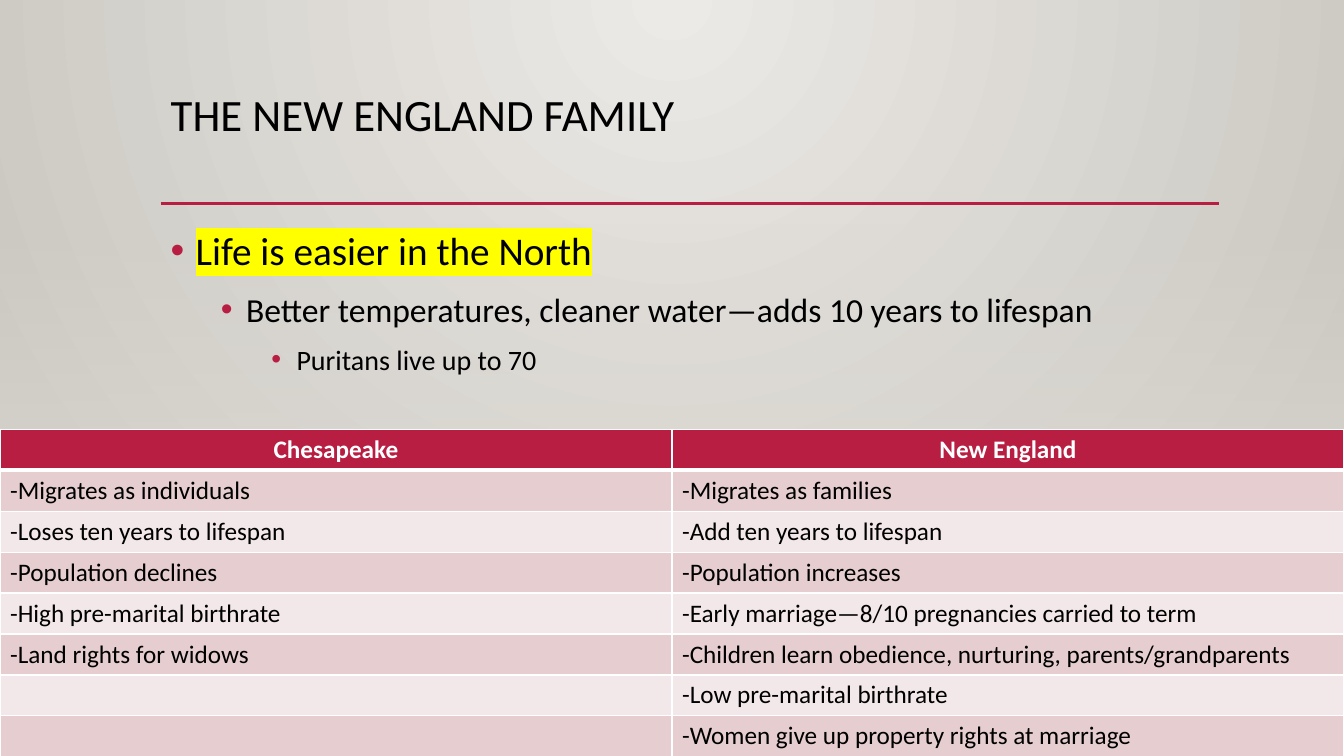
"""Build the slide on the New England family, with its comparison table."""
from lxml.etree import SubElement
from pptx import Presentation
from pptx.dml.color import RGBColor
from pptx.enum.shapes import MSO_CONNECTOR, MSO_SHAPE
from pptx.enum.text import MSO_ANCHOR, MSO_AUTO_SIZE, PP_ALIGN
from pptx.oxml import parse_xml
from pptx.oxml.ns import qn
from pptx.util import Pt

PX = 9525
WIDTH, HEIGHT = 1280, 720
LEFT, CONTENT_WIDTH = 153, 1008
TABLE_TOP, ROW_HEIGHT = 409, 39
INDENT, INDENT_STEP = 24, 48
FONT = "Calibri"
COLORS = {
    "text": "000000",
    "accent": "B71E42",
    "white": "FFFFFF",
    "highlight": "FFFF00",
    "odd_row": "E6CDCF",
    "even_row": "F3E8E9",
    "glow": "ECEAE7",
    "edge": "CAC7C1",
    "veil": "DFDBD5",
}
NAMESPACE = 'xmlns:a="http://schemas.openxmlformats.org/drawingml/2006/main"'
BULLETS = [
    ("Life is easier in the North", 28, 0),
    ("Better temperatures, cleaner water—adds 10 years to lifespan", 24, 5),
    ("Puritans live up to 70", 20, 5),
]
ROWS = [
    ("Chesapeake", "New England"),
    ("-Migrates as individuals", "-Migrates as families"),
    ("-Loses ten years to lifespan", "-Add ten years to lifespan"),
    ("-Population declines", "-Population increases"),
    ("-High pre-marital birthrate", "-Early marriage—8/10 pregnancies carried to term"),
    ("-Land rights for widows", "-Children learn obedience, nurturing, parents/grandparents"),
    ("", "-Low pre-marital birthrate"),
    ("", "-Women give up property rights at marriage"),
]


def style_runs(para, size, color, bold=False):
    for span in para.runs:
        span.font.name = FONT
        span.font.size = Pt(size)
        span.font.bold = bold
        span.font.color.rgb = RGBColor.from_string(COLORS[color])


def add_color(parent, tag, color):
    holder = SubElement(parent, qn(tag))
    SubElement(holder, qn("a:srgbClr"), val=COLORS[color])
    return holder


deck = Presentation()
deck.slide_width, deck.slide_height = WIDTH * PX, HEIGHT * PX
page = deck.slides.add_slide(deck.slide_layouts[5])

page.background.fill.gradient()
backdrop = page.background.fill
for stop, color in zip(backdrop.gradient_stops, ("glow", "edge")):
    stop.color.rgb = RGBColor.from_string(COLORS[color])
gradient = page.element.find(".//" + qn("a:gradFill"))
gradient.replace(gradient.find(qn("a:lin")), parse_xml(
    f'<a:path {NAMESPACE} path="circle">'
    '<a:fillToRect l="43000" t="0" r="43000" b="100000"/></a:path>'))

veil = page.shapes.add_shape(MSO_SHAPE.RECTANGLE, 0, 212 * PX, WIDTH * PX, 431 * PX)
veil.shadow.inherit = False
veil.line.fill.background()
veil.fill.gradient()
veil.fill.gradient_angle = 270
for stop in veil.fill.gradient_stops:
    stop.color.rgb = RGBColor.from_string(COLORS["veil"])
SubElement(veil.element.find(".//" + qn("a:srgbClr")), qn("a:alpha"), val="0")

rule = page.shapes.add_connector(
    MSO_CONNECTOR.STRAIGHT, LEFT * PX, 194 * PX, (LEFT + CONTENT_WIDTH) * PX, 194 * PX)
rule.line.color.rgb = RGBColor.from_string(COLORS["accent"])
rule.line.width = Pt(2.5)
SubElement(rule.element.spPr, qn("a:effectLst"))

title = page.shapes.title
title.left, title.top = LEFT * PX, 84 * PX
title.width, title.height = CONTENT_WIDTH * PX, 110 * PX
title.text_frame.text = "THE NEW ENGLAND FAMILY"
title.text_frame.vertical_anchor = MSO_ANCHOR.TOP
title.text_frame.auto_size = MSO_AUTO_SIZE.NONE
heading = title.text_frame.paragraphs[0]
heading.alignment = PP_ALIGN.LEFT
heading.line_spacing = 0.9
style_runs(heading, 32, "text")

box = page.shapes.add_textbox(LEFT * PX, 202 * PX, CONTENT_WIDTH * PX, 200 * PX)
box.text_frame.word_wrap = True
box.text_frame.text = "\n".join(text for text, size, space in BULLETS)
for level, (para, (text, size, space)) in enumerate(zip(box.text_frame.paragraphs, BULLETS)):
    para.level = level
    properties = para._p.get_or_add_pPr()
    properties.set("marL", str((INDENT + level * INDENT_STEP) * PX))
    properties.set("indent", str(-INDENT * PX))
    add_color(properties, "a:buClr", "accent")
    SubElement(properties, qn("a:buFont"), typeface="Arial")
    SubElement(properties, qn("a:buChar"), char="•")
    para.line_spacing = 1.2
    para.space_before = Pt(space)
    style_runs(para, size, "text")
lead = box.text_frame.paragraphs[0].runs[0].font
marker = add_color(lead._element, "a:highlight", "highlight")
lead._element.find(qn("a:solidFill")).addnext(marker)

table = page.shapes.add_table(
    len(ROWS), 2, 0, TABLE_TOP * PX, WIDTH * PX, len(ROWS) * ROW_HEIGHT * PX).table
for row, texts in enumerate(ROWS):
    table.rows[row].height = ROW_HEIGHT * PX
    header = row == 0
    fill = "accent" if header else ("odd_row" if row % 2 else "even_row")
    for column, text in enumerate(texts):
        cell = table.cell(row, column)
        cell.text = text
        para = cell.text_frame.paragraphs[0]
        para.alignment = PP_ALIGN.CENTER if header else PP_ALIGN.LEFT
        style_runs(para, 18, "white" if header else "text", header)
        borders = cell._tc.get_or_add_tcPr()
        for side in ("L", "R", "T", "B"):
            thick = (header and side == "B") or (row == 1 and side == "T")
            edge = SubElement(borders, qn(f"a:ln{side}"), w=str(Pt(3 if thick else 1)))
            add_color(edge, "a:solidFill", "white")
        cell.fill.solid()
        cell.fill.fore_color.rgb = RGBColor.from_string(COLORS[fill])

deck.save("out.pptx")
